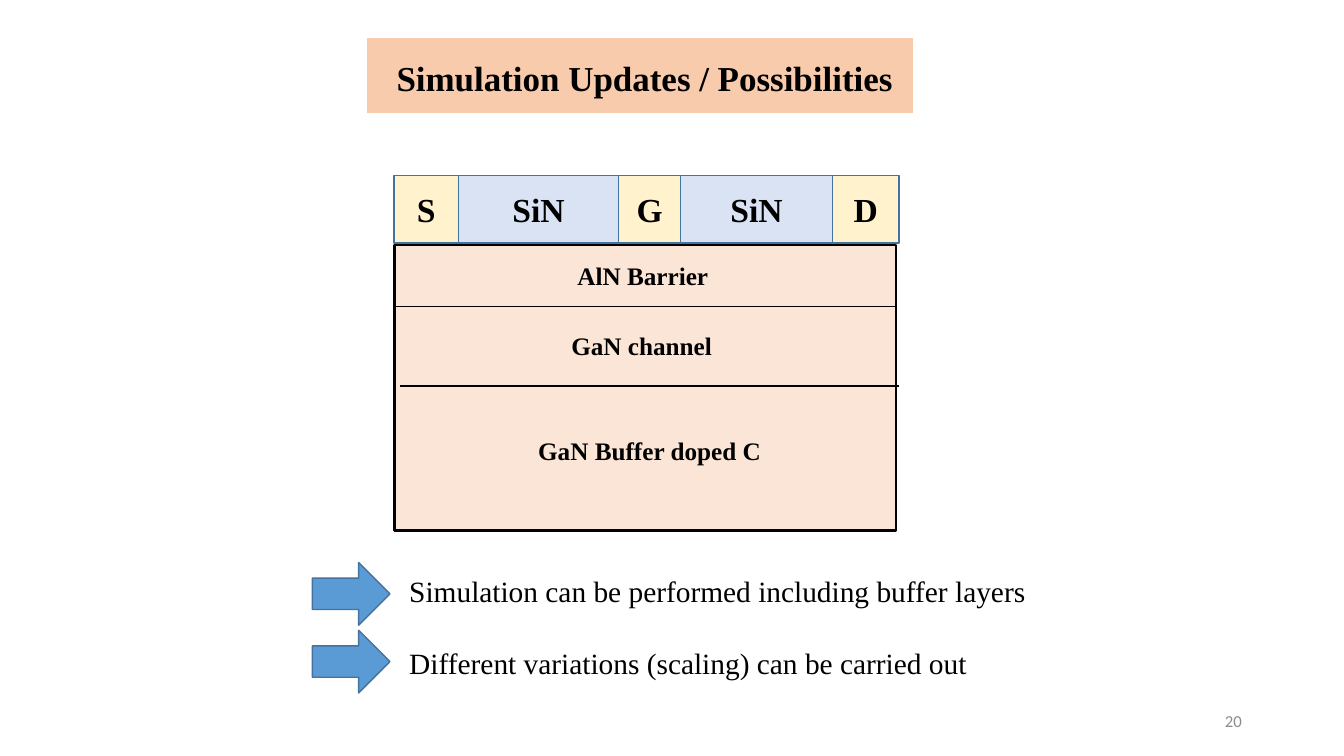
from pptx import Presentation
from pptx import util as u
from pptx.dml import color
from pptx.enum import shapes, text
from pptx.oxml import ns
from lxml import etree

HEX = {
    "ink": "000000", "band": "F8CBAD", "white": "FFFFFF", "layer": "FBE5D6",
    "metal": "FFF2CC", "nitride": "DAE3F3", "edge": "43739E",
    "arrow": "5B9BD5", "grey": "8C8C8C",
}
LEFT, CENTER, RIGHT = (text.PP_ALIGN.LEFT, text.PP_ALIGN.CENTER,
                       text.PP_ALIGN.RIGHT)
TOP, MIDDLE = text.MSO_ANCHOR.TOP, text.MSO_ANCHOR.MIDDLE


def rgb(name):
    return color.RGBColor.from_string(HEX[name])


class Deck:
    """Style and current slide; all lengths are in points."""
    font = "Times New Roman"

    def __init__(self, slide):
        self.slide = slide

    def place(self, item, x, y, w, h):
        item.left, item.top = u.Pt(x), u.Pt(y)
        item.width, item.height = u.Pt(w), u.Pt(h)

    def paint(self, item, fill, line, width=1):
        item.fill.solid()
        item.fill.fore_color.rgb = rgb(fill)
        item.line.color.rgb = rgb(line)
        item.line.width = u.Pt(width)

    def letter(self, item, lines, size, bold=False, align=LEFT, anchor=TOP,
               wrap=True, ink="ink", font=None, gap=0):
        """Fill a frame with one paragraph per line, gap points apart."""
        frame = item.text_frame
        frame.auto_size = text.MSO_AUTO_SIZE.NONE
        frame.word_wrap = wrap
        frame.vertical_anchor = anchor
        for i, line in enumerate(lines):
            para = frame.add_paragraph() if i else frame.paragraphs[0]
            para.alignment = align
            para.line_spacing = 1.0
            para.space_before = u.Pt(gap if i else 0)
            run = para.add_run()
            run.text = line
            run.font.name = font or self.font
            run.font.size = u.Pt(size)
            run.font.bold = bold
            run.font.color.rgb = rgb(ink)

    def title(self, line, x, y, w, h):
        item = self.slide.shapes.title
        self.place(item, x, y, w, h)
        self.paint(item, "band", "white")
        item.text_frame.margin_left = u.Pt(13)
        item.text_frame.margin_top = u.Pt(7)
        self.letter(item, [line], 25, True, CENTER, MIDDLE)

    def body(self, lines, x, y, w, h, gap):
        item = self.slide.placeholders[1]
        self.place(item, x, y, w, h)
        self.letter(item, lines, 21, gap=gap)
        for para in item.text_frame.paragraphs:
            props = para._p.get_or_add_pPr()
            props.set("marL", "0")
            props.set("indent", "0")
            etree.SubElement(props, ns.qn("a:buNone"))

    def shape(self, kind, x, y, w, h, fill, line, width=1):
        item = self.slide.shapes.add_shape(kind, *map(u.Pt, (x, y, w, h)))
        item.shadow.inherit = False
        self.paint(item, fill, line, width)
        return item

    def label(self, line, x, y, w, h, size, **style):
        item = self.slide.shapes.add_textbox(*map(u.Pt, (x, y, w, h)))
        self.letter(item, [line], size, **style)

    def rule(self, x, y, w):
        item = self.slide.shapes.add_connector(
            shapes.MSO_CONNECTOR.STRAIGHT, *map(u.Pt, (x, y, x + w, y)))
        item.line.color.rgb = rgb("ink")
        item.line.width = u.Pt(1)
        etree.SubElement(item._element.spPr, ns.qn("a:effectLst"))


def main():
    prs = Presentation()
    prs.slide_width, prs.slide_height = u.Pt(960), u.Pt(540)
    deck = Deck(prs.slides.add_slide(prs.slide_layouts[1]))
    rect = shapes.MSO_SHAPE.RECTANGLE
    arrow = shapes.MSO_SHAPE.RIGHT_ARROW

    deck.title("Simulation Updates / Possibilities", 262, 26.5, 391, 54.5)

    # Epitaxial layers
    deck.shape(rect, 281.5, 175, 358.5, 203.8, "layer", "ink", 2)
    deck.rule(285.8, 275.8, 356.4)
    deck.rule(283, 218.9, 357)
    deck.label("GaN Buffer doped C", 357.8, 307.4, 212.4, 39, 18,
               bold=True, align=CENTER, wrap=False)
    deck.label("GaN channel", 401, 232.6, 119.5, 29, 18, bold=True)
    deck.label("AlN Barrier", 405.4, 182.2, 117.4, 29, 18, bold=True)

    # Contacts and passivation, side by side
    x = 281.5
    for name, w, fill in (("S", 46, "metal"), ("SiN", 114.5, "nitride"),
                          ("G", 44, "metal"), ("SiN", 108.7, "nitride"),
                          ("D", 47.5, "metal")):
        block = deck.shape(rect, x, 125.5, w, 48.2, fill, "edge")
        deck.letter(block, [name], 24, True, CENTER, MIDDLE)
        x += w

    deck.body(["Simulation can be performed including buffer layers",
               "Different variations (scaling) can be carried out"],
              285.1, 406.1, 486, 83.5, gap=26)
    for i in range(2):
        deck.shape(arrow, 223.2, 401.8 + 48.4 * i, 55.4, 44.8,
                   "arrow", "edge")

    deck.label("20", 678.2, 500.4, 216, 28.8, 12, align=RIGHT,
               anchor=MIDDLE, ink="grey", font="Calibri")
    prs.save("out.pptx")


if __name__ == "__main__":
    main()
